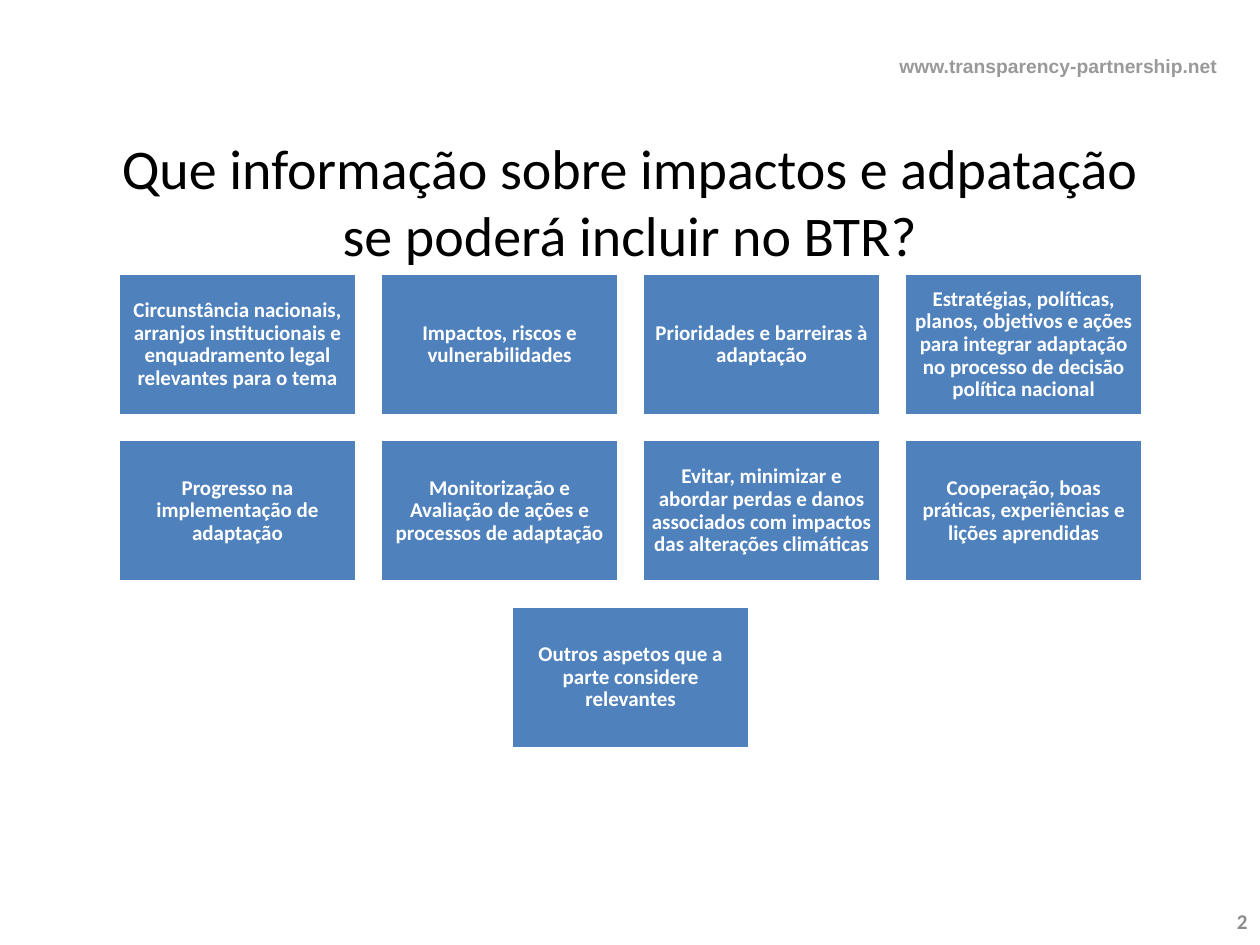
from pptx import Presentation
from pptx.dml.color import RGBColor
from pptx.enum.shapes import MSO_SHAPE
from pptx.enum.text import MSO_ANCHOR, PP_ALIGN
from pptx.util import Inches, Pt

RECTANGLE = MSO_SHAPE.RECTANGLE
TOP, MIDDLE = MSO_ANCHOR.TOP, MSO_ANCHOR.MIDDLE
LEFT, CENTER, RIGHT = PP_ALIGN.LEFT, PP_ALIGN.CENTER, PP_ALIGN.RIGHT

BLACK = RGBColor(0x00, 0x00, 0x00)
WHITE = RGBColor(0xFF, 0xFF, 0xFF)
BLUE = RGBColor(0x4F, 0x81, 0xBD)
URL_GRAY = RGBColor(0x99, 0x99, 0x99)
NUMBER_GRAY = RGBColor(0x8C, 0x8C, 0x8C)

COLUMNS = 4
GRID_LEFT, GRID_TOP = 0.94, 2.17
CARD_W, CARD_H = 1.89, 1.13
COLUMN_STEP, ROW_STEP = 2.08, 1.32

TOPICS = [
    "Circunstância nacionais, arranjos institucionais e enquadramento legal relevantes para o tema",
    "Impactos, riscos e vulnerabilidades",
    "Prioridades e barreiras à adaptação",
    "Estratégias, políticas, planos, objetivos e ações para integrar adaptação "
    "no processo de decisão política nacional",
    "Progresso na implementação de adaptação",
    "Monitorização e Avaliação de ações e processos de adaptação",
    "Evitar, minimizar e abordar perdas e danos associados com impactos das alterações climáticas",
    "Cooperação, boas práticas, experiências e lições aprendidas",
    "Outros aspetos que a parte considere relevantes",
]


def write(sp, text, size, color, font="Calibri", bold=False, align=LEFT, anchor=TOP):
    """Put one styled paragraph into a shape and return the paragraph."""
    tf = sp.text_frame
    tf.word_wrap = True
    tf.vertical_anchor = anchor
    p = tf.paragraphs[0]
    p.text = text
    p.alignment = align
    p.font.name = font
    p.font.size = Pt(size)
    p.font.bold = bold
    p.font.color.rgb = color
    return p


def add_text(slide, box, text, size, color, **style):
    sp = slide.shapes.add_textbox(*map(Inches, box))
    write(sp, text, size, color, **style)


def add_card(slide, left, top, text):
    sp = slide.shapes.add_shape(
        RECTANGLE, Inches(left), Inches(top), Inches(CARD_W), Inches(CARD_H))
    sp.shadow.inherit = False
    sp.fill.solid()
    sp.fill.fore_color.rgb = BLUE
    sp.line.color.rgb = WHITE
    sp.line.width = Pt(2)
    tf = sp.text_frame
    tf.margin_left = tf.margin_right = tf.margin_top = tf.margin_bottom = Inches(0.05)
    p = write(sp, text, 12, WHITE, bold=True, align=CENTER, anchor=MIDDLE)
    p.line_spacing = 0.9


def add_card_grid(slide, topics):
    """Lay the topics out in rows, centring a row that is not full."""
    for row, start in enumerate(range(0, len(topics), COLUMNS)):
        row_topics = topics[start:start + COLUMNS]
        indent = (COLUMNS - len(row_topics)) * COLUMN_STEP / 2
        for column, text in enumerate(row_topics):
            left = GRID_LEFT + indent + column * COLUMN_STEP
            add_card(slide, left, GRID_TOP + row * ROW_STEP, text)


def main():
    prs = Presentation()
    prs.slide_width, prs.slide_height = Inches(10), Inches(7.5)
    slide = prs.slides.add_slide(prs.slide_layouts[6])
    add_text(slide, (7.04, 0.38, 3.06, 0.29), "www.transparency-partnership.net",
             11, URL_GRAY, font="Arial", bold=True)
    add_text(slide, (7.67, 7.11, 2.33, 0.4), "2",
             12, NUMBER_GRAY, bold=True, align=RIGHT, anchor=MIDDLE)
    add_card_grid(slide, TOPICS)
    add_text(slide, (0.69, 1.01, 8.62, 1.03),
             "Que informação sobre impactos e adpatação se poderá incluir no BTR?",
             32, BLACK, align=CENTER)
    prs.save("out.pptx")


if __name__ == "__main__":
    main()
